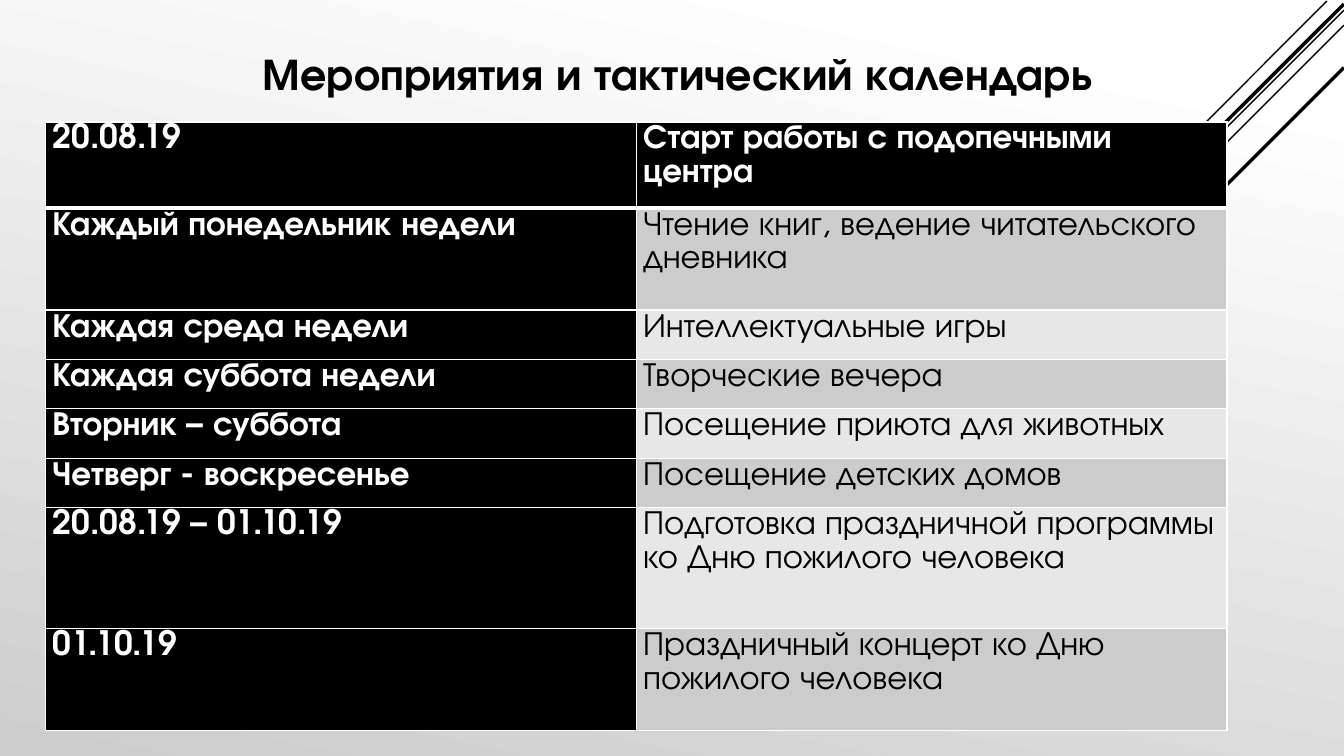
from lxml import etree
from pptx import Presentation
from pptx.dml.color import RGBColor
from pptx.enum.shapes import MSO_CONNECTOR
from pptx.enum.text import MSO_AUTO_SIZE, PP_ALIGN
from pptx.oxml.ns import qn
from pptx.util import Inches, Pt

STRAIGHT = MSO_CONNECTOR.STRAIGHT
CENTER = PP_ALIGN.CENTER
FIT_SHAPE = MSO_AUTO_SIZE.SHAPE_TO_FIT_TEXT

FONT = "TeX Gyre Adventor"
BLACK, WHITE = "000000", "FFFFFF"
BANDS = ("E7E7E7", "CCCCCC")

CORNER_LINES = [
    (13.16, 0.01, 9, 4.18, 1),
    (13.33, 0.1, 6.68, 6.75, 1),
    (13.33, 0.25, 7.91, 5.67, 1),
    (13.33, 0.04, 8.02, 5.34, 2.5),
    (13.33, 0.67, 8.58, 5.42, 2.5),
]

CALENDAR = [
    ("20.08.19", "Старт работы с подопечными центра", 0.79),
    ("Каждый понедельник недели", "Чтение книг, ведение читательского дневника", 1.01),
    ("Каждая среда недели", "Интеллектуальные игры", 0.49),
    ("Каждая суббота недели", "Творческие вечера", 0.49),
    ("Вторник – суббота", "Посещение приюта для животных", 0.49),
    ("Четверг - воскресенье", "Посещение детских домов", 0.49),
    ("20.08.19 – 01.10.19", "Подготовка праздничной программы ко Дню пожилого человека", 1.2),
    ("01.10.19", "Праздничный концерт ко Дню пожилого человека", 1.01),
]


def color(value):
    """Turn a hex string into a colour."""
    return RGBColor.from_string(value)


def set_background(slide):
    """Fill the slide background with a white to grey gradient."""
    fill = slide.background.fill
    fill.gradient()
    fill.gradient_angle = 258
    stops = ((0.1, WHITE), (1, "CDCDCD"))
    for stop, (position, value) in zip(fill.gradient_stops, stops):
        stop.position = position
        stop.color.rgb = color(value)


def add_line(slide, left, top, right, bottom, width):
    """Draw one black line of the corner decoration."""
    ends = [Inches(length) for length in (left, top, right, bottom)]
    connector = slide.shapes.add_connector(STRAIGHT, *ends)
    connector.line.color.rgb = color(BLACK)
    connector.line.width = Pt(width)
    etree.SubElement(connector._element.spPr, qn("a:effectLst"))


def format_text(paragraph, size, value, bold):
    """Format every run of a paragraph."""
    for run in paragraph.runs:
        run.font.name = FONT
        run.font.size = Pt(size)
        run.font.bold = bold
        run.font.color.rgb = color(value)


def add_title(slide, text):
    """Add the centred slide title."""
    box = slide.shapes.add_textbox(Inches(2.08), Inches(0.4), Inches(9.29), Inches(0.64))
    frame = box.text_frame
    frame.text = text
    frame.word_wrap = False
    frame.auto_size = FIT_SHAPE
    paragraph = frame.paragraphs[0]
    paragraph.alignment = CENTER
    format_text(paragraph, 32, BLACK, True)


def set_borders(cell, top, bottom):
    """Give a cell white borders with the given top and bottom widths."""
    properties = cell._tc.get_or_add_tcPr()
    sides = (("lnL", 1), ("lnR", 1), ("lnT", top), ("lnB", bottom))
    for index, (side, width) in enumerate(sides):
        border = etree.Element(qn(f"a:{side}"), w=str(Pt(width)))
        fill = etree.SubElement(border, qn("a:solidFill"))
        etree.SubElement(fill, qn("a:srgbClr"), val=WHITE)
        properties.insert(index, border)


def fill_cell(cell, text, background, dark):
    """Write the text of a cell on its background."""
    cell.margin_left = cell.margin_right = Inches(0.07)
    cell.margin_top = cell.margin_bottom = 0
    cell.fill.solid()
    cell.fill.fore_color.rgb = color(background)
    cell.text_frame.text = text
    paragraph = cell.text_frame.paragraphs[0]
    paragraph.line_spacing = 1.07
    format_text(paragraph, 24, WHITE if dark else BLACK, dark)


def add_calendar(slide):
    """Add the table of dates and events."""
    frame = slide.shapes.add_table(
        len(CALENDAR), 2, Inches(0.45), Inches(1.21), Inches(11.72), Inches(5.97)
    )
    table = frame.table
    table.horz_banding = False
    for row_index, (date, event, height) in enumerate(CALENDAR):
        table.rows[row_index].height = Inches(height)
        for column_index, text in enumerate((date, event)):
            cell = table.cell(row_index, column_index)
            dark = row_index == 0 or column_index == 0
            fill_cell(cell, text, BLACK if dark else BANDS[row_index % 2], dark)
            set_borders(cell, 3 if row_index == 1 else 1, 3 if row_index == 0 else 1)


def main():
    """Build the slide and save the presentation."""
    presentation = Presentation()
    presentation.slide_width = Inches(13.33)
    presentation.slide_height = Inches(7.5)
    slide = presentation.slides.add_slide(presentation.slide_layouts[6])
    set_background(slide)
    for line in CORNER_LINES:
        add_line(slide, *line)
    add_title(slide, "Мероприятия и тактический календарь")
    add_calendar(slide)
    presentation.save("out.pptx")


if __name__ == "__main__":
    main()
